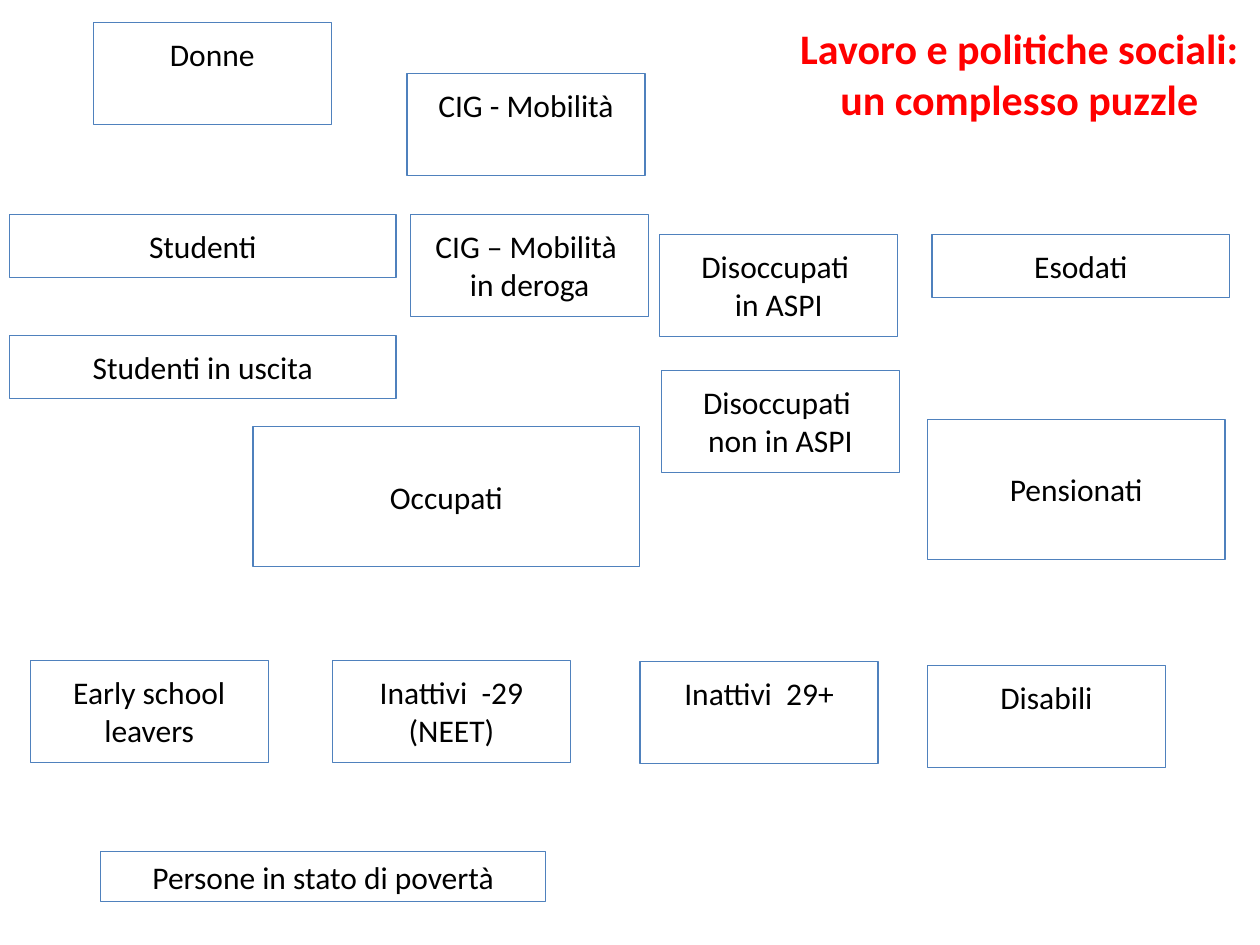
from dataclasses import dataclass

from pptx import Presentation
from pptx.dml.color import RGBColor
from pptx.enum.shapes import MSO_SHAPE
from pptx.enum.text import MSO_ANCHOR, MSO_AUTO_SIZE, PP_ALIGN
from pptx.util import Pt

RECTANGLE = MSO_SHAPE.RECTANGLE
TOP, MIDDLE = MSO_ANCHOR.TOP, MSO_ANCHOR.MIDDLE
CENTER = PP_ALIGN.CENTER
NO_AUTOFIT = MSO_AUTO_SIZE.NONE
TITLE_ONLY = 5


@dataclass(frozen=True)
class Theme:
    font: str = "Calibri"
    title_size: int = 24
    label_size: int = 18
    title: RGBColor = RGBColor(0xFF, 0x00, 0x00)
    label: RGBColor = RGBColor(0x00, 0x00, 0x00)
    border: RGBColor = RGBColor(0x4F, 0x81, 0xBD)
    border_width: float = 0.75


THEME = Theme()

GROUP = (136, 58.3)
STUDENT = (221, 36)
WORKER = (221, 80)
PENSIONER = (170, 80)
LEAVER = (170, 36)
POVERTY = (254.2, 28.8)

CATEGORIES = [
    (["Donne"], 53.3, 13, GROUP),
    (["CIG - Mobilità"], 232.6, 41.8, GROUP),
    (["Studenti"], 5.4, 122.6, STUDENT),
    (["CIG – Mobilità ", "in deroga"], 234.7, 122.6, GROUP),
    (["Disoccupati ", "in ASPI"], 377, 134, GROUP),
    (["Esodati"], 532.6, 134, LEAVER),
    (["Studenti in uscita"], 5.4, 191.8, STUDENT),
    (["Disoccupati ", "non in ASPI"], 378, 211.6, GROUP),
    (["Occupati"], 144.6, 243.8, WORKER),
    (["Pensionati"], 530, 239.6, PENSIONER),
    (["Early school leavers"], 17.3, 377.4, GROUP),
    (["Inattivi  -29 (NEET)"], 190, 377.4, GROUP),
    (["Inattivi  29+"], 365.8, 378, GROUP),
    (["Disabili"], 530, 380.3, GROUP),
    (["Persone in stato di povertà"], 57.6, 486.6, POVERTY),
]


def place(element, left, top, width, height):
    element.left, element.top = Pt(left), Pt(top)
    element.width, element.height = Pt(width), Pt(height)


def write_lines(frame, lines, size, color, bold=False):
    for index, line in enumerate(lines):
        paragraph = frame.add_paragraph() if index else frame.paragraphs[0]
        paragraph.alignment = CENTER
        run = paragraph.add_run()
        run.text = line
        run.font.name = THEME.font
        run.font.size = Pt(size)
        run.font.bold = bold
        run.font.color.rgb = color


def set_title(slide, text):
    title = slide.shapes.title
    place(title, 445, 9.4, 275, 65.5)
    frame = title.text_frame
    frame.auto_size = NO_AUTOFIT
    frame.word_wrap = True
    frame.vertical_anchor = TOP
    write_lines(frame, [text], THEME.title_size, THEME.title, bold=True)


def add_category(slide, lines, left, top, size):
    width, height = size
    box = slide.shapes.add_shape(RECTANGLE, Pt(left), Pt(top), Pt(width), Pt(height))
    box.shadow.inherit = False
    box.fill.background()
    box.line.color.rgb = THEME.border
    box.line.width = Pt(THEME.border_width)
    frame = box.text_frame
    frame.word_wrap = True
    frame.vertical_anchor = MIDDLE if size in (WORKER, PENSIONER) else TOP
    frame.margin_left = frame.margin_right = Pt(3.6)
    frame.margin_top = frame.margin_bottom = Pt(3.6 if size == POVERTY else 7.2)
    write_lines(frame, lines, THEME.label_size, THEME.label)


def main():
    deck = Presentation()
    deck.slide_width, deck.slide_height = Pt(720), Pt(540)
    slide = deck.slides.add_slide(deck.slide_layouts[TITLE_ONLY])
    set_title(slide, "Lavoro e politiche sociali: un complesso puzzle")
    for lines, left, top, size in CATEGORIES:
        add_category(slide, lines, left, top, size)
    deck.save("out.pptx")


if __name__ == "__main__":
    main()
